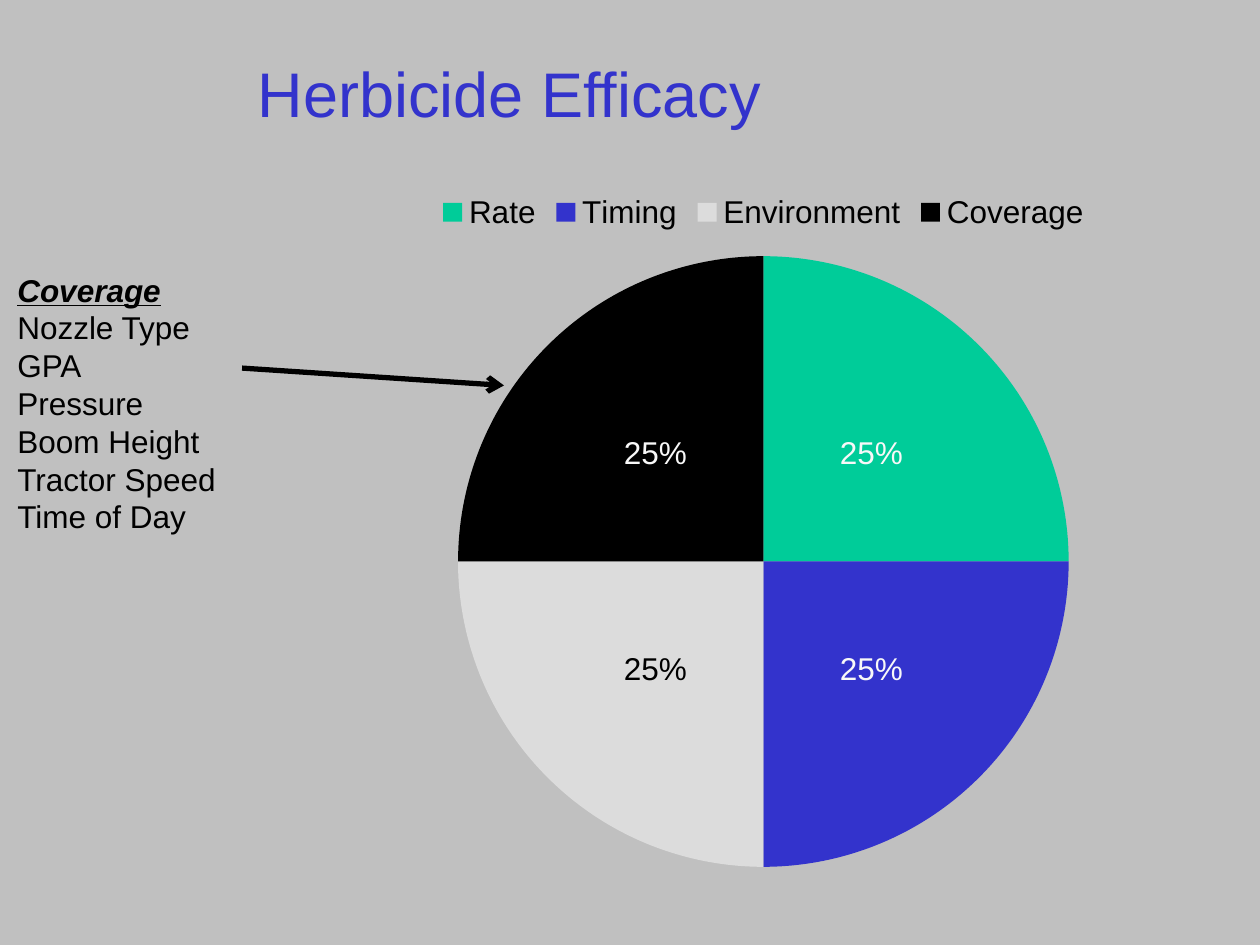
from lxml.etree import SubElement
from pptx import Presentation
from pptx.chart.data import CategoryChartData
from pptx.dml.color import RGBColor
from pptx.enum.chart import XL_CHART_TYPE as CT, XL_LABEL_POSITION as LP, XL_LEGEND_POSITION as LEG
from pptx.enum.shapes import MSO_CONNECTOR as CONN
from pptx.enum.text import MSO_ANCHOR as ANCHOR
from pptx.oxml.ns import qn
from pptx.util import Cm, Pt


def style(font, color, **fmt):
    """Apply colour and format values to a font, Arial 18 pt by default."""
    for name, value in {"name": "Arial", "size": Pt(18), **fmt}.items():
        setattr(font, name, value)
    font.color.rgb = RGBColor.from_string(color)


def add_text(box, lines, anchor, wrap):
    """Add a text box and return its paragraphs, one for each line."""
    tf = slide.shapes.add_textbox(*map(Cm, box)).text_frame
    tf.word_wrap = wrap
    tf.vertical_anchor = anchor
    tf.text = "\n".join(lines)
    return tf.paragraphs


prs = Presentation()
prs.slide_width, prs.slide_height = Cm(25.4), Cm(19.05)
slide = prs.slides.add_slide(prs.slide_layouts[6])
fill = slide.background.fill
fill.solid()
fill.fore_color.rgb = RGBColor.from_string("C0C0C0")

# Title
title = add_text((4.95, 0.28, 20.24, 3.18), ["Herbicide Efficacy"], ANCHOR.MIDDLE, True)
style(title[0].runs[0].font, "3333CC", size=Pt(36))

# Pie chart
slices = {"Rate": "00CC99", "Timing": "3333CC", "Environment": "DCDCDC", "Coverage": "000000"}
data = CategoryChartData(number_format="0%")
data.categories = list(slices)
data.add_series("Series 1", [0.25] * len(slices))
frame = slide.shapes.add_chart(CT.PIE, Cm(5.38), Cm(3.61), Cm(20.02), Cm(14.15), data)
chart = frame.chart
style(chart.font, "000000")
chart.has_title = False
chart.has_legend = True
chart.legend.position = LEG.TOP
chart.legend.include_in_layout = False

plot = chart.plots[0]
plot.vary_by_categories = True
plot.has_data_labels = True
labels = plot.data_labels
for name, value in {"show_value": True, "show_percentage": False, "number_format": "0%",
                    "number_format_is_linked": False, "position": LP.CENTER}.items():
    setattr(labels, name, value)
style(labels.font, "F8F8F8")

points = plot.series[0].points
for i, color in enumerate(slices.values()):
    fmt = points[i].format
    fmt.fill.solid()
    fmt.fill.fore_color.rgb = RGBColor.from_string(color)
    fmt.line.fill.background()
    label = points[i].data_label
    style(label.font, "000000" if color == "DCDCDC" else "F8F8F8")
    label.position = LP.CENTER

# Plot area as fractions of the chart frame
area = chart.element.find(".//" + qn("c:plotArea"))
for old in area.findall(qn("c:layout")):
    area.remove(old)
layout = SubElement(area, qn("c:layout"))
area.insert(0, layout)
manual = SubElement(layout, qn("c:manualLayout"))
for tag, value in {"layoutTarget": "inner", "xMode": "edge", "yMode": "edge",
                   "x": 0.19, "y": 0.11, "w": 0.62, "h": 0.87}.items():
    SubElement(manual, qn("c:" + tag)).set("val", str(value))

# Coverage factors
factors = ["Coverage", "Nozzle Type", "GPA", "Pressure", "Boom Height", "Tractor Speed", "Time of Day"]
for i, p in enumerate(add_text((0.1, 5.33, 4.55, 5.64), factors, ANCHOR.TOP, False)):
    head = i == 0
    style(p.runs[0].font, "000000", bold=head, italic=head, underline=head)

# Arrow to the Coverage slice
arrow = slide.shapes.add_connector(CONN.STRAIGHT, Cm(4.88), Cm(7.42), Cm(10.16), Cm(7.77))
arrow.line.width = Pt(3)
arrow.line.color.rgb = RGBColor.from_string("000000")
SubElement(arrow.line._get_or_add_ln(), qn("a:tailEnd")).set("type", "arrow")
SubElement(arrow._element.spPr, qn("a:effectLst"))

prs.save("out.pptx")
